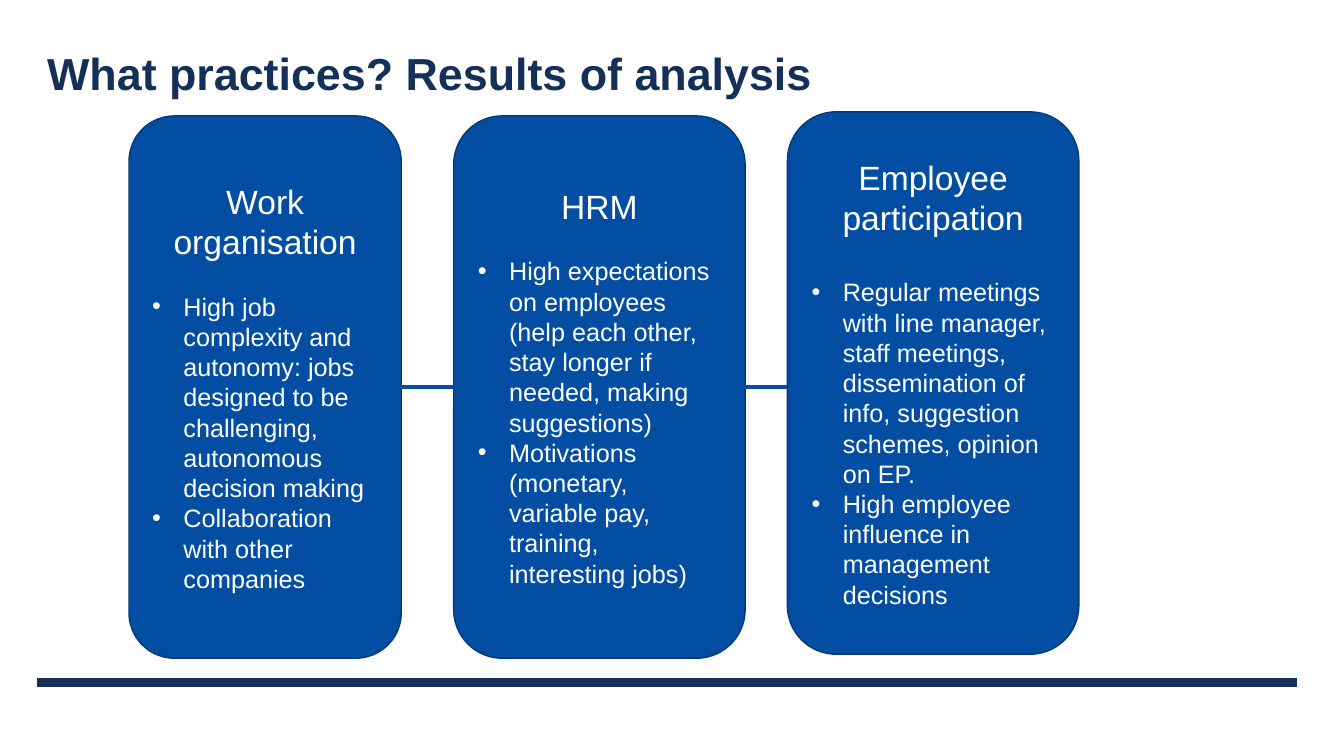
from dataclasses import dataclass

from lxml import etree
from pptx import Presentation
from pptx.dml.color import RGBColor
from pptx.enum.shapes import MSO_CONNECTOR, MSO_SHAPE
from pptx.enum.text import MSO_ANCHOR, PP_ALIGN
from pptx.oxml.ns import qn
from pptx.slide import Slide
from pptx.text.text import _Paragraph
from pptx.util import Pt

ROUNDED = MSO_SHAPE.ROUNDED_RECTANGLE
STRAIGHT = MSO_CONNECTOR.STRAIGHT
MIDDLE = MSO_ANCHOR.MIDDLE
CENTER = PP_ALIGN.CENTER
LEFT = PP_ALIGN.LEFT

EMU_PER_PX = 9144  # 100 px to the inch
FONT = "Arial"
NAVY = RGBColor(0x14, 0x30, 0x58)
BLUE = RGBColor(0x03, 0x4E, 0xA2)
DARK_BLUE = RGBColor(0x02, 0x3A, 0x78)
WHITE = RGBColor(0xFF, 0xFF, 0xFF)

MARGIN = 37
CONTENT_WIDTH = 1249
RULE_Y = 677
CARD_HEIGHT = 538
LINK_Y = 384
BULLET_INDENT = 31


@dataclass(frozen=True)
class Card:
    left: int
    top: int
    width: int
    heading: str
    heading_gap: int  # points
    bullets: tuple[str, ...]

    @property
    def right(self) -> int:
        return self.left + self.width


CARDS = (
    Card(128, 115, 270, "Work organisation", 21, (
        "High job complexity and autonomy: jobs designed to be challenging, "
        "autonomous decision making",
        "Collaboration with other companies",
    )),
    Card(450, 115, 289, "HRM", 21, (
        "High expectations on employees (help each other, stay longer if "
        "needed, making suggestions)",
        "Motivations (monetary, variable pay, training, interesting jobs)",
    )),
    Card(781, 111, 289, "Employee participation", 28, (
        "Regular meetings with line manager, staff meetings, dissemination "
        "of info, suggestion schemes, opinion on EP.",
        "High employee influence in management decisions",
    )),
)


def px(length: int) -> int:
    return length * EMU_PER_PX


def style_text(paragraph: _Paragraph, size: int, color: RGBColor,
               bold: bool = False) -> None:
    for run in paragraph.runs:
        run.font.name = FONT
        run.font.size = Pt(size)
        run.font.bold = bold
        run.font.color.rgb = color


def add_bullet(paragraph: _Paragraph) -> None:
    properties = paragraph._p.get_or_add_pPr()
    properties.set("marL", str(px(BULLET_INDENT)))
    properties.set("indent", str(-px(BULLET_INDENT)))
    etree.SubElement(properties, qn("a:buFont")).set("typeface", FONT)
    etree.SubElement(properties, qn("a:buChar")).set("char", "•")


def add_horizontal_line(slide: Slide, left: int, right: int, y: int,
                        color: RGBColor, width: int) -> None:
    line = slide.shapes.add_connector(STRAIGHT, px(left), px(y), px(right), px(y))
    line.line.color.rgb = color
    line.line.width = Pt(width)
    etree.SubElement(line._element.spPr, qn("a:effectLst"))


def add_title(slide: Slide, text: str) -> None:
    title = slide.shapes.add_textbox(px(MARGIN), px(30), px(CONTENT_WIDTH), px(85))
    text_frame = title.text_frame
    text_frame.word_wrap = True
    text_frame.vertical_anchor = MIDDLE
    text_frame.text = text
    style_text(text_frame.paragraphs[0], 32, NAVY, bold=True)


def add_card(slide: Slide, card: Card) -> None:
    shape = slide.shapes.add_shape(
        ROUNDED, px(card.left), px(card.top), px(card.width), px(CARD_HEIGHT))
    shape.shadow.inherit = False
    shape.fill.solid()
    shape.fill.fore_color.rgb = BLUE
    shape.line.color.rgb = DARK_BLUE
    shape.line.width = Pt(1)

    text_frame = shape.text_frame
    text_frame.word_wrap = True
    text_frame.vertical_anchor = MIDDLE
    text_frame.text = card.heading
    heading = text_frame.paragraphs[0]
    heading.alignment = CENTER
    heading.space_after = Pt(card.heading_gap)
    style_text(heading, 24, WHITE)

    for bullet in card.bullets:
        paragraph = text_frame.add_paragraph()
        paragraph.text = bullet
        paragraph.alignment = LEFT
        add_bullet(paragraph)
        style_text(paragraph, 18, WHITE)


def main() -> None:
    presentation = Presentation()
    presentation.slide_width = px(1333)
    presentation.slide_height = px(750)
    slide = presentation.slides.add_slide(presentation.slide_layouts[6])

    add_horizontal_line(slide, MARGIN, MARGIN + CONTENT_WIDTH, RULE_Y, NAVY, 6)
    add_title(slide, "What practices? Results of analysis")
    for card in CARDS:
        add_card(slide, card)
    for card, following in zip(CARDS, CARDS[1:]):
        add_horizontal_line(slide, card.right, following.left, LINK_Y, BLUE, 3)

    presentation.save("out.pptx")


if __name__ == "__main__":
    main()
